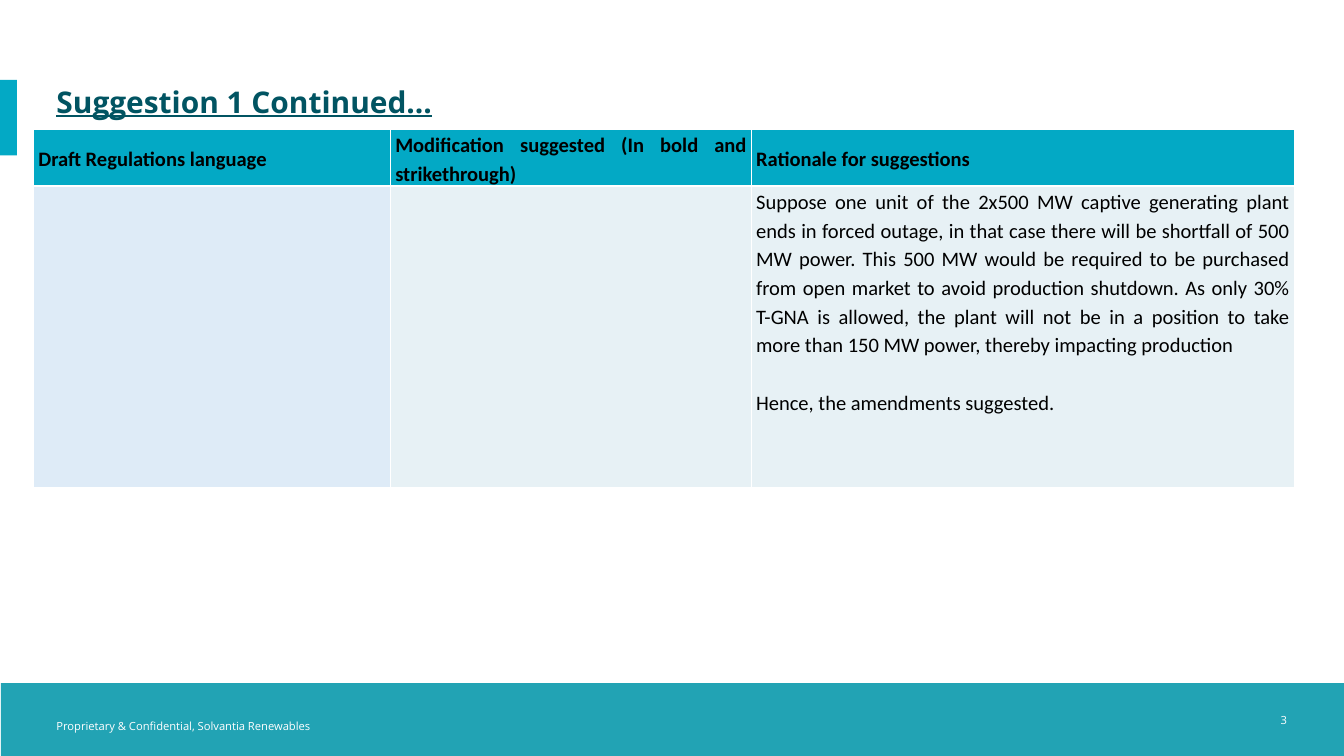
"""Build the suggestion slide with its three-column table."""
import lxml.etree
import pptx
import pptx.dml.color
import pptx.enum.shapes
import pptx.enum.text
import pptx.oxml.ns
import pptx.util

Cm, Pt = pptx.util.Cm, pptx.util.Pt
ALIGN = pptx.enum.text.PP_ALIGN
ANCHOR = pptx.enum.text.MSO_ANCHOR
RECT = pptx.enum.shapes.MSO_SHAPE.RECTANGLE


def tint(code):
    return pptx.dml.color.RGBColor.from_string(code)


def put(item, **values):
    for name, value in values.items():
        setattr(item, name, value)


class Page:
    cyan, teal, dark, white, black = "03A9C5", "22A3B4", "015462", "FFFFFF", "000000"
    head = dict(name="Open Sans", size=Pt(32), bold=True, underline=True)
    small = dict(name="Open Sans", size=Pt(12))
    label = dict(name="Calibri", size=Pt(22), bold=True)
    prose = dict(label, bold=False)

    def __init__(self, deck):
        self.slide = deck.slides.add_slide(deck.slide_layouts[5])

    def words(self, para, text, font, color, **form):
        para.text = text
        put(para, **form)
        put(para.font, **font)
        para.font.color.rgb = tint(color)

    def bar(self, x, y, w, h, color):
        shape = self.slide.shapes.add_shape(RECT, Cm(x), Cm(y), Cm(w), Cm(h))
        shape.shadow.inherit = False
        shape.fill.solid()
        shape.fill.fore_color.rgb = tint(color)
        shape.line.fill.background()

    def title(self, text, x, y, w, h):
        shape = self.slide.shapes.title
        put(shape, left=Cm(x), top=Cm(y), width=Cm(w), height=Cm(h))
        put(shape.text_frame, word_wrap=True, vertical_anchor=ANCHOR.TOP,
            auto_size=pptx.enum.text.MSO_AUTO_SIZE.NONE)
        self.words(shape.text_frame.paragraphs[0], text, self.head, self.dark,
                   alignment=ALIGN.LEFT, space_after=Pt(9))

    def note(self, text, x, y, w, h, align=ALIGN.LEFT, anchor=ANCHOR.TOP):
        frame = self.slide.shapes.add_textbox(Cm(x), Cm(y), Cm(w), Cm(h)).text_frame
        put(frame, word_wrap=True, vertical_anchor=anchor)
        self.words(frame.paragraphs[0], text, self.small, self.white, alignment=align)

    def edge(self, cell, sides):
        props = cell._tc.get_or_add_tcPr()
        for side, width in sides.items():
            line = lxml.etree.SubElement(
                props, pptx.oxml.ns.qn("a:ln" + side), w=str(int(Pt(width))))
            fill = lxml.etree.SubElement(line, pptx.oxml.ns.qn("a:solidFill"))
            lxml.etree.SubElement(fill, pptx.oxml.ns.qn("a:srgbClr"), val=self.white)

    def cell(self, cell, color, sides, anchor):
        self.edge(cell, sides)
        cell.fill.solid()
        cell.fill.fore_color.rgb = tint(color)
        put(cell, margin_left=Cm(0.18), margin_right=Cm(0.18), margin_top=0,
            margin_bottom=0, vertical_anchor=anchor)

    def table(self, x, y, wide, high, heads, fills, body):
        table = self.slide.shapes.add_table(
            len(high), len(wide), Cm(x), Cm(y), Cm(sum(wide)), Cm(sum(high))).table
        for row, size in zip(table.rows, high):
            row.height = Cm(size)
        for col, size in enumerate(wide):
            table.columns[col].width = Cm(size)
            top, low = table.cell(0, col), table.cell(1, col)
            self.cell(top, self.cyan, dict(L=1, R=1, T=1, B=3), ANCHOR.MIDDLE)
            self.cell(low, fills[col], dict(L=1, R=1, B=1), ANCHOR.TOP)
            self.words(top.text_frame.paragraphs[0], heads[col], self.label,
                       self.black, alignment=ALIGN.JUSTIFY, line_spacing=1.15)
        frame = low.text_frame
        for rank, text in enumerate(body):
            para = frame.add_paragraph() if rank else frame.paragraphs[0]
            self.words(para, text, self.prose, self.black, alignment=ALIGN.JUSTIFY,
                       line_spacing=1.15, space_before=Pt(31 if rank else 0))


def main():
    deck = pptx.Presentation()
    put(deck, slide_width=Cm(50.8), slide_height=Cm(28.58))
    page = Page(deck)
    page.bar(0.03, 25.83, 50.8, 2.84, page.teal)
    page.bar(0, 3.02, 0.64, 2.86, page.cyan)
    page.note("Proprietary & Confidential, Solvantia Renewables", 1.88, 27.08, 24.13, 0.76)
    page.title("Suggestion 1 Continued…", 1.88, 3.02, 42.11, 3.71)
    page.note("3", 42.98, 26.57, 5.92, 1.27, ALIGN.RIGHT, ANCHOR.MIDDLE)
    page.table(
        1.27, 4.88, (13.49, 13.64, 20.52), (2.16, 11.4),
        ("Draft Regulations language",
         "Modification suggested (In bold and strikethrough)",
         "Rationale for suggestions"),
        ("DEEBF7", "E7F1F5", "E7F1F5"),
        ("Suppose one unit of the 2x500 MW captive generating plant ends in forced "
         "outage, in that case there will be shortfall of 500 MW power. This 500 MW "
         "would be required to be purchased from open market to avoid production "
         "shutdown. As only 30% T-GNA is allowed, the plant will not be in a position "
         "to take more than 150 MW power, thereby impacting production",
         "Hence, the amendments suggested."))
    deck.save("out.pptx")


if __name__ == "__main__":
    main()
